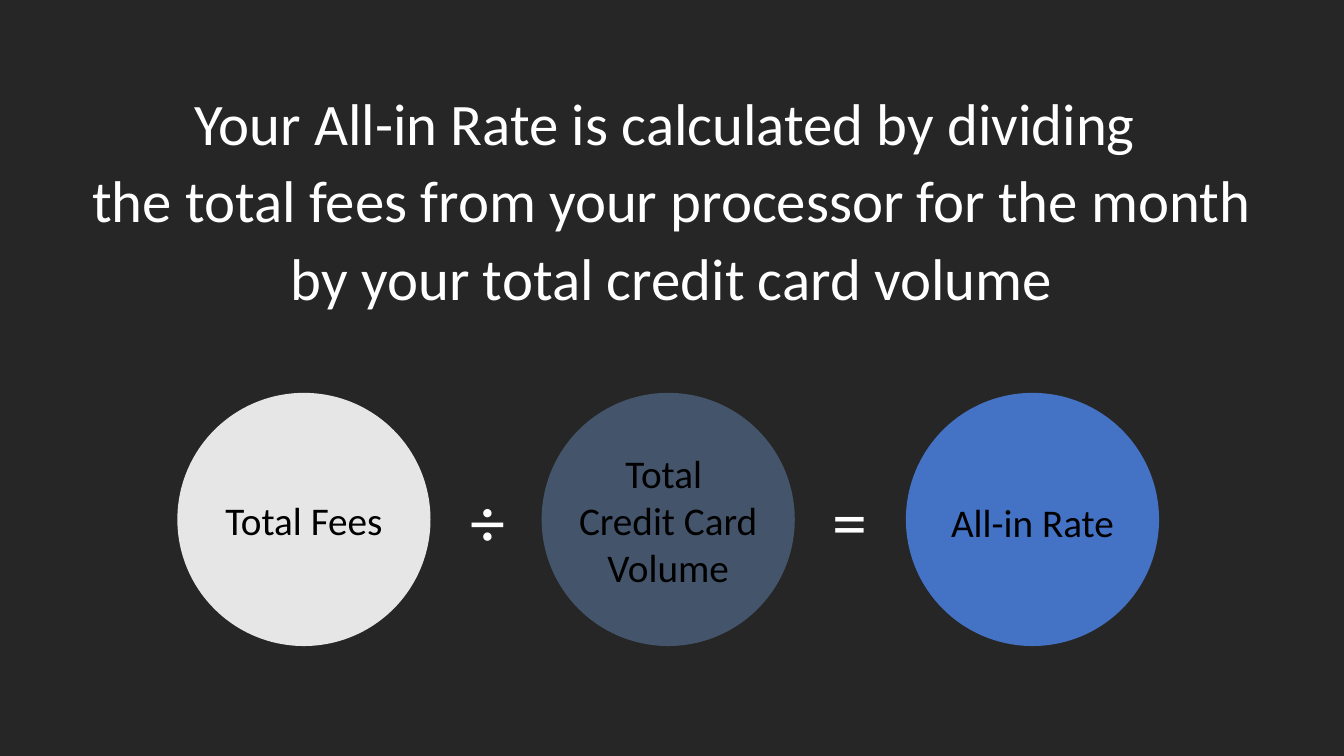
"""Build the slide that explains how the All-in Rate is worked out."""
import dataclasses

import pptx
import pptx.dml.color
import pptx.enum.shapes
import pptx.enum.text
import pptx.util

Cm = pptx.util.Cm
TEXT = pptx.enum.text


@dataclasses.dataclass
class Ball:
    text: str
    fill: str
    lead: float = 1.0


BALLS = [
    Ball("Total Fees", "E7E6E6"),
    Ball("Total \nCredit Card\nVolume", "44546A"),
    Ball("All-in Rate", "4472C4", 1.1),
]
SIGNS = ["÷", "="]
FRAME = {
    "vertical_anchor": TEXT.MSO_ANCHOR.MIDDLE,
    "auto_size": TEXT.MSO_AUTO_SIZE.NONE,
}


def tint(code: str) -> pptx.dml.color.RGBColor:
    return pptx.dml.color.RGBColor.from_string(code)


def write(shape, text: str, size: int, color: str, lead: float = 1.0, wrap: bool = True) -> None:
    frame = shape.text_frame
    frame.text = text
    for name, value in (FRAME | {"word_wrap": wrap}).items():
        setattr(frame, name, value)
    look = {"alignment": TEXT.PP_ALIGN.CENTER, "line_spacing": lead}
    face = {"name": "Calibri", "size": pptx.util.Pt(size)}
    for para in frame.paragraphs:
        for name, value in look.items():
            setattr(para, name, value)
        for run in para.runs:
            for name, value in face.items():
                setattr(run.font, name, value)
            run.font.color.rgb = tint(color)


def draw_title(slide, text: str) -> None:
    title = slide.shapes.title
    box = {"left": Cm(1.14), "top": Cm(0), "width": Cm(31.57), "height": Cm(9.86)}
    for name, value in box.items():
        setattr(title, name, value)
    write(title, text, 42, "FFFFFF", 1.1)


def draw_ball(slide, ball: Ball, left: float) -> None:
    kind = pptx.enum.shapes.MSO_SHAPE.OVAL
    shape = slide.shapes.add_shape(kind, Cm(left), Cm(9.9), Cm(6.38), Cm(6.38))
    shape.shadow.inherit = False
    shape.fill.solid()
    shape.fill.fore_color.rgb = tint(ball.fill)
    shape.line.fill.background()
    write(shape, ball.text, 28, "000000", ball.lead, False)


def draw_sign(slide, sign: str, left: float) -> None:
    box = slide.shapes.add_textbox(Cm(left), Cm(11.89), Cm(4.17), Cm(2.39))
    write(box, sign, 50, "FFFFFF")


def main() -> None:
    deck = pptx.Presentation()
    deck.slide_width, deck.slide_height = Cm(33.87), Cm(19.05)
    slide = deck.slides.add_slide(deck.slide_layouts[5])
    slide.background.fill.solid()
    slide.background.fill.fore_color.rgb = tint("262626")
    draw_title(
        slide,
        "Your All-in Rate is calculated by dividing \n"
        "the total fees from your processor for the month\n"
        "by your total credit card volume",
    )
    for rank, ball in enumerate(BALLS):
        draw_ball(slide, ball, 4.47 + 9.18 * rank)
    for rank, sign in enumerate(SIGNS):
        draw_sign(slide, sign, 10.21 + 9.12 * rank)
    deck.save("out.pptx")


if __name__ == "__main__":
    main()
